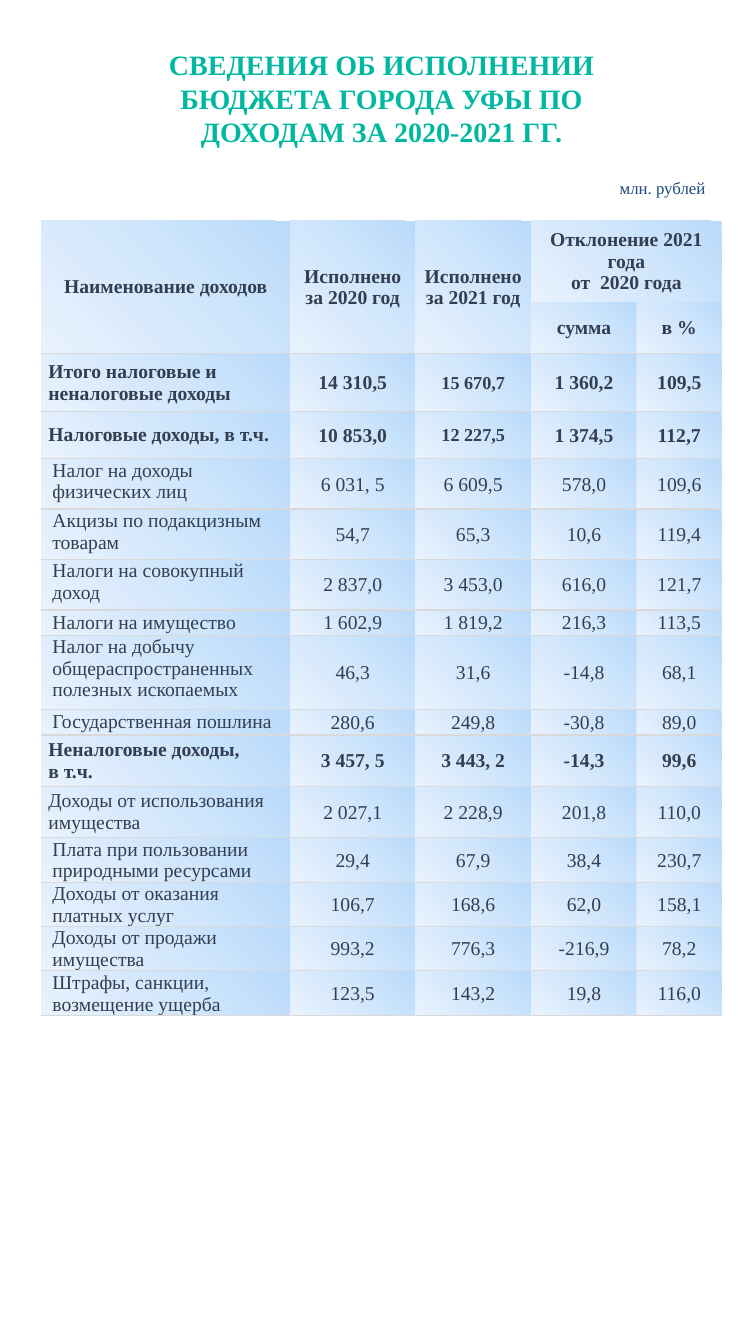
from dataclasses import dataclass

import lxml.etree
import pptx
import pptx.dml.color
import pptx.enum.text
import pptx.oxml
import pptx.oxml.ns
import pptx.util
from pptx.enum.text import MSO_ANCHOR, PP_ALIGN
from pptx.util import Inches

FONT = "Times New Roman"
TEXT_COLOR = "333F50"
BORDER_COLOR = "D9D9D9"
GRADIENT_STOPS = ((0, "B9DAFB"), (50, "D3E7FC"), (100, "E9F2FD"))
NO_STYLE_NO_GRID = "{2D5ABB26-0587-4C30-8999-92F81FD0307C}"
COLUMN_WIDTHS = (2.47, 1.24, 1.15, 1.05, 0.84)
HEADER_HEIGHTS = (0.81, 0.49)
WIDE_MARGINS = (0.07, 0.04, 0.07, 0.04)
NARROW_MARGINS = (0.01, 0.01, 0.01, 0)


@dataclass
class HeaderCell:
    row: int
    column: int
    text: str
    row_span: int = 1
    column_span: int = 1


@dataclass
class IncomeRow:
    label: str
    values: tuple[str, str, str, str]
    height: float
    bold: bool = False
    indented: bool = True
    anchor: MSO_ANCHOR = MSO_ANCHOR.TOP
    size_2021: float = 14


HEADERS = [
    HeaderCell(0, 0, "Наименование доходов", row_span=2),
    HeaderCell(0, 1, "Исполнено за 2020 год", row_span=2),
    HeaderCell(0, 2, "Исполнено за 2021 год", row_span=2),
    HeaderCell(0, 3, "Отклонение 2021 года\nот  2020 года", column_span=2),
    HeaderCell(1, 3, "сумма"),
    HeaderCell(1, 4, "в %"),
]

INCOME_ROWS = [
    IncomeRow("Итого налоговые и неналоговые доходы", ("14 310,5", "15 670,7", "1 360,2", "109,5"),
              0.57, bold=True, indented=False, anchor=MSO_ANCHOR.MIDDLE, size_2021=13),
    IncomeRow("Налоговые доходы, в т.ч.", ("10 853,0", "12 227,5", "1 374,5", "112,7"),
              0.47, bold=True, indented=False, anchor=MSO_ANCHOR.MIDDLE, size_2021=13),
    IncomeRow("Налог на доходы физических лиц", ("6 031, 5", "6 609,5", "578,0", "109,6"), 0.5),
    IncomeRow("Акцизы по подакцизным товарам", ("54,7", "65,3", "10,6", "119,4"), 0.5),
    IncomeRow("Налоги на совокупный доход", ("2 837,0", "3 453,0", "616,0", "121,7"), 0.5),
    IncomeRow("Налоги на имущество", ("1 602,9", "1 819,2", "216,3", "113,5"),
              0.25, anchor=MSO_ANCHOR.MIDDLE),
    IncomeRow("Налог на добычу общераспространенных полезных ископаемых",
              ("46,3", "31,6", "-14,8", "68,1"), 0.74),
    IncomeRow("Государственная пошлина", ("280,6", "249,8", "-30,8", "89,0"), 0.25),
    IncomeRow("Неналоговые доходы,\nв т.ч.", ("3 457, 5", "3 443, 2", "-14,3", "99,6"),
              0.5, bold=True, indented=False),
    IncomeRow("Доходы от использования имущества", ("2 027,1", "2 228,9", "201,8", "110,0"),
              0.5, indented=False, anchor=MSO_ANCHOR.MIDDLE),
    IncomeRow("Плата при пользовании природными ресурсами", ("29,4", "67,9", "38,4", "230,7"), 0.44),
    IncomeRow("Доходы от оказания платных услуг", ("106,7", "168,6", "62,0", "158,1"), 0.44),
    IncomeRow("Доходы от продажи имущества", ("993,2", "776,3", "-216,9", "78,2"), 0.44),
    IncomeRow("Штрафы, санкции, возмещение ущерба", ("123,5", "143,2", "19,8", "116,0"),
              0.44, anchor=MSO_ANCHOR.MIDDLE),
]


def rgb(color: str) -> pptx.dml.color.RGBColor:
    return pptx.dml.color.RGBColor.from_string(color)


def write_text(text_frame, text: str, *, size: float = 14, color: str = TEXT_COLOR,
               bold: bool = False, align: PP_ALIGN = PP_ALIGN.LEFT, indent: float = 0) -> None:
    text_frame.text = text
    text_frame.word_wrap = True
    for paragraph in text_frame.paragraphs:
        paragraph.alignment = align
        if indent:
            paragraph._p.get_or_add_pPr().set("marL", str(Inches(indent)))
        for run in paragraph.runs:
            run.font.name = FONT
            run.font.size = pptx.util.Pt(size)
            run.font.bold = bold
            run.font.color.rgb = rgb(color)


def add_element(parent, tag: str, **attributes: str):
    return lxml.etree.SubElement(parent, pptx.oxml.ns.qn(tag), attributes)


def paint_cell(cell, borders: tuple[str, ...]) -> None:
    properties = cell._tc.get_or_add_tcPr()
    for border in borders:
        line = add_element(properties, border, w=str(pptx.util.Pt(1)))
        add_element(add_element(line, "a:solidFill"), "a:srgbClr", val=BORDER_COLOR)
    gradient = add_element(properties, "a:gradFill", rotWithShape="1")
    stops = add_element(gradient, "a:gsLst")
    for percent, color in GRADIENT_STOPS:
        stop = add_element(stops, "a:gs", pos=str(percent * 1000))
        add_element(stop, "a:srgbClr", val=color)
    add_element(gradient, "a:lin", ang=str(135 * 60000), scaled="0")


def fill_cell(cell, text: str, *, margins: tuple[float, ...] = NARROW_MARGINS,
              anchor: MSO_ANCHOR = MSO_ANCHOR.MIDDLE,
              borders: tuple[str, ...] = ("a:lnT", "a:lnB"), **text_format) -> None:
    write_text(cell.text_frame, text, **text_format)
    cell.margin_left, cell.margin_top, cell.margin_right, cell.margin_bottom = map(Inches, margins)
    cell.vertical_anchor = anchor
    paint_cell(cell, borders)


def add_income_table(slide) -> None:
    heights = [*HEADER_HEIGHTS, *(row.height for row in INCOME_ROWS)]
    frame = slide.shapes.add_table(len(heights), len(COLUMN_WIDTHS), Inches(0.41), Inches(2.19),
                                   Inches(sum(COLUMN_WIDTHS)), Inches(sum(heights)))
    table = frame.table
    table.first_row = table.horz_banding = False
    table._tbl.tblPr.find(pptx.oxml.ns.qn("a:tableStyleId")).text = NO_STYLE_NO_GRID
    for column, width in zip(table.columns, COLUMN_WIDTHS):
        column.width = Inches(width)
    for row, height in zip(table.rows, heights):
        row.height = Inches(height)

    # Header cells
    for header in HEADERS:
        cell = table.cell(header.row, header.column)
        if header.row_span > 1 or header.column_span > 1:
            cell.merge(table.cell(header.row + header.row_span - 1,
                                  header.column + header.column_span - 1))
        fill_cell(cell, header.text, margins=WIDE_MARGINS, bold=True, align=PP_ALIGN.CENTER,
                  borders=() if header.column_span > 1 else ("a:lnB",))

    # Income rows
    for row_index, income in enumerate(INCOME_ROWS, start=len(HEADER_HEIGHTS)):
        fill_cell(table.cell(row_index, 0), income.label, bold=income.bold, anchor=income.anchor,
                  margins=NARROW_MARGINS if income.indented else WIDE_MARGINS,
                  indent=0.1 if income.indented else 0)
        for column_index, value in enumerate(income.values, start=1):
            fill_cell(table.cell(row_index, column_index), value, bold=income.bold,
                      align=PP_ALIGN.CENTER, size=income.size_2021 if column_index == 2 else 14)


def main() -> None:
    presentation = pptx.Presentation()
    presentation.slide_width = Inches(7.5)
    presentation.slide_height = Inches(13.33)
    slide = presentation.slides.add_slide(presentation.slide_layouts[5])

    # Title
    title = slide.shapes.title
    title.left, title.top, title.width, title.height = map(Inches, (1.51, 0.42, 4.55, 1.11))
    write_text(title.text_frame, "СВЕДЕНИЯ ОБ ИСПОЛНЕНИИ БЮДЖЕТА ГОРОДА УФЫ ПО ДОХОДАМ ЗА 2020-2021 ГГ.",
               size=20, color="00B8A0", bold=True, align=PP_ALIGN.CENTER)
    title.text_frame.vertical_anchor = MSO_ANCHOR.TOP
    title.text_frame.auto_size = pptx.enum.text.MSO_AUTO_SIZE.NONE

    # Table and its unit of measure
    add_income_table(slide)
    unit = slide.shapes.add_textbox(Inches(6.05), Inches(1.71), Inches(1.44), Inches(0.3))
    write_text(unit.text_frame, "млн. рублей", size=12, color="1F497D")

    presentation.save("out.pptx")


if __name__ == "__main__":
    main()
